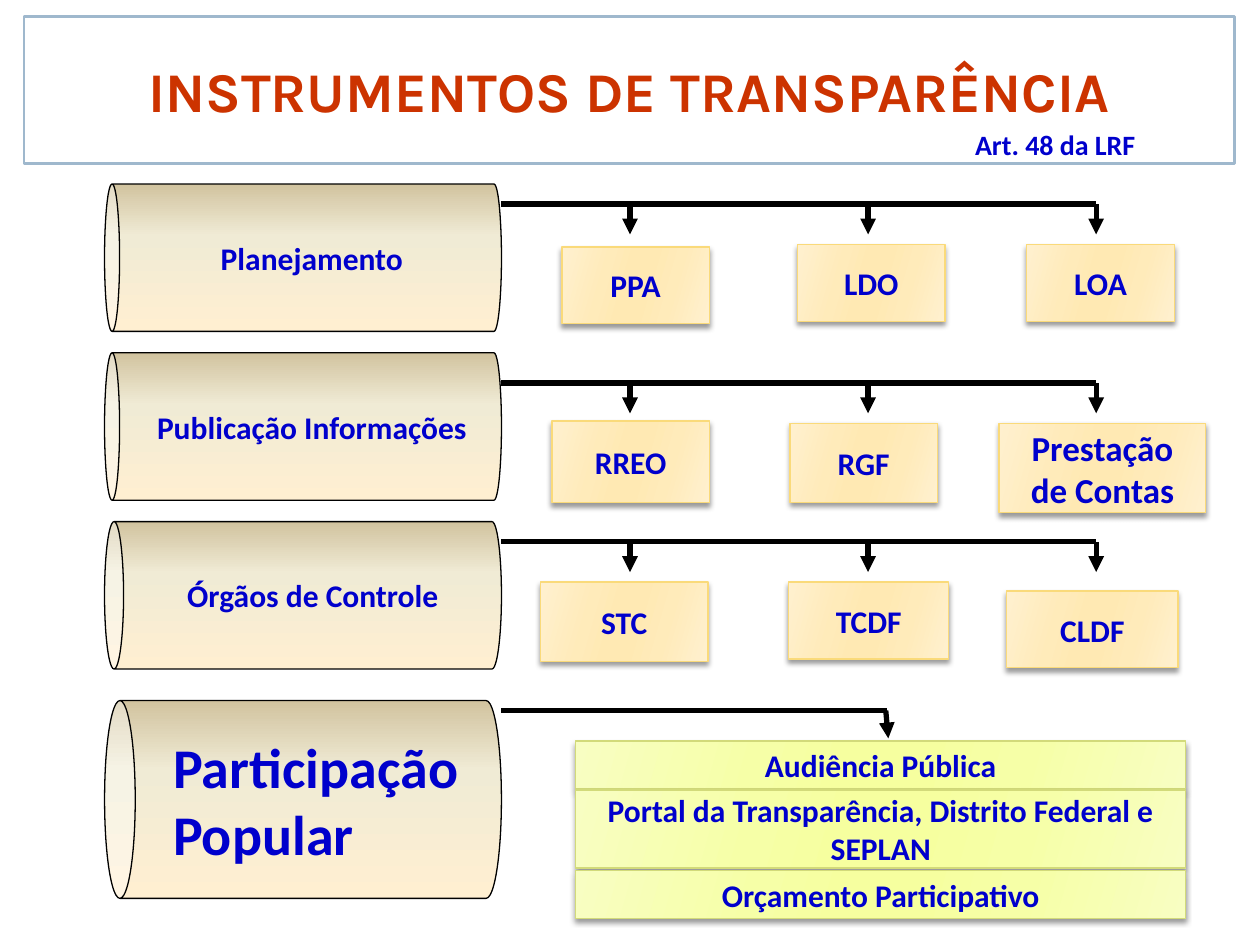
from pptx import Presentation
from pptx.dml.color import RGBColor
from pptx.enum.shapes import MSO_CONNECTOR, MSO_SHAPE
from pptx.enum.text import MSO_ANCHOR, PP_ALIGN
from pptx.oxml import parse_xml
from pptx.oxml.ns import nsdecls, qn
from pptx.util import Inches, Pt
from lxml import etree

RECTANGLE, CAN = MSO_SHAPE.RECTANGLE, MSO_SHAPE.CAN
STRAIGHT = MSO_CONNECTOR.STRAIGHT
MIDDLE = MSO_ANCHOR.MIDDLE
CENTER, LEFT = PP_ALIGN.CENTER, PP_ALIGN.LEFT

COLORS = {
    "white": "FFFFFF", "black": "000000", "frame": "9FB8CD",
    "title": "CC3300", "text": "0000CC",
    "amber_line": "FADA7A", "lime_line": "D2DA7A",
}
CAN_STOPS = [(0, "FFEFD1"), (65, "F0EBD5"), (100, "D1C39F")]
SHEEN = (0, 30, 45, 55, 73, 100)
AMBER = ("FFF0CF", "FFEBBA", "FFE9B3")
LIME = ("F8FEC2", "F6FFA7", "F6FF9F")

CAN_LEFT, CAN_WIDTH = 0.83, 3.15
BUS_LEFT = CAN_LEFT + CAN_WIDTH
DROPS = (5, 6.89, 8.7)
DROP_LENGTH = 0.24

ROWS = [
    ("Planejamento", 1.46, 0.102, 0.16,
     [("PPA", 4.46, 0.5, 1.17, 0.61, 18),
      ("LDO", 6.33, 0.48, 1.17, 0.61, 18),
      ("LOA", 8.15, 0.48, 1.17, 0.61, 18)]),
    ("Publicação Informações", 2.8, 0.102, 0.24,
     [("RREO", 4.38, 0.54, 1.25, 0.65, 18),
      ("RGF", 6.27, 0.56, 1.17, 0.63, 18),
      ("Prestação de Contas", 7.93, 0.56, 1.64, 0.71, 20)]),
    ("Órgãos de Controle", 4.14, 0.129, 0.16,
     [("STC", 4.29, 0.48, 1.33, 0.63, 18),
      ("TCDF", 6.26, 0.48, 1.27, 0.61, 18),
      ("CLDF", 7.99, 0.55, 1.36, 0.61, 18)]),
]
CHANNELS = [
    ("Audiência Pública", 0.32, 0.38),
    ("Portal da Transparência, Distrito Federal e SEPLAN", 0.71, 0.62),
    ("Orçamento Participativo", 1.35, 0.38),
]


def rgb(name):
    return RGBColor.from_string(COLORS[name])


def style_text(paragraph, size, align, color="text", font="Calibri"):
    paragraph.alignment = align
    paragraph.font.size = Pt(size)
    paragraph.font.name = font
    paragraph.font.bold = True
    paragraph.font.color.rgb = rgb(color)


def set_outline(shape, color, width):
    shape.line.color.rgb = rgb(color)
    shape.line.width = Pt(width)


def set_gradient(shape, stops, angle):
    shape.fill.solid()
    marks = "".join(
        f'<a:gs pos="{position * 1000}"><a:srgbClr val="{color}"/></a:gs>'
        for position, color in stops)
    gradient = parse_xml(
        f'<a:gradFill {nsdecls("a")} rotWithShape="1"><a:gsLst>{marks}</a:gsLst>'
        f'<a:lin ang="{angle * 60000}" scaled="0"/></a:gradFill>')
    properties = shape.element.spPr
    properties.replace(properties.find(qn("a:solidFill")), gradient)


def add_shadow(shape):
    shape.shadow.inherit = False
    shape.element.spPr.find(qn("a:effectLst")).append(parse_xml(
        f'<a:outerShdw {nsdecls("a")} blurRad="{Pt(3)}" dist="{Pt(2)}" '
        'dir="5400000" rotWithShape="0"><a:srgbClr val="000000">'
        '<a:alpha val="40000"/></a:srgbClr></a:outerShdw>'))


def add_line(slide, x1, y1, x2, y2, arrow=False):
    line = slide.shapes.add_connector(
        STRAIGHT, Inches(x1), Inches(y1), Inches(x2), Inches(y2))
    set_outline(line, "black", 3)
    if arrow:
        etree.SubElement(line.line._get_or_add_ln(), qn("a:tailEnd"), type="triangle")
    etree.SubElement(line.element.spPr, qn("a:effectLst"))


def add_card(slide, label, left, top, width, height, size, tones, outline):
    card = slide.shapes.add_shape(
        RECTANGLE, Inches(left), Inches(top), Inches(width), Inches(height))
    set_gradient(card, list(zip(SHEEN, tones + tones[::-1])), 16)
    set_outline(card, outline, 0.75)
    add_shadow(card)
    frame = card.text_frame
    frame.word_wrap = True
    frame.vertical_anchor = MIDDLE
    frame.margin_top = frame.margin_bottom = 0
    frame.text = label
    style_text(frame.paragraphs[0], size, CENTER)


def add_can(slide, label, top, height, lid, size):
    left = CAN_LEFT + (CAN_WIDTH - height) / 2
    upright_top = top + (height - CAN_WIDTH) / 2
    can = slide.shapes.add_shape(
        CAN, Inches(left), Inches(upright_top), Inches(height), Inches(CAN_WIDTH))
    can.rotation = 270
    can.adjustments[0] = lid
    can.shadow.inherit = False
    set_gradient(can, CAN_STOPS, 0)
    set_outline(can, "black", 0.75)
    frame = can.text_frame
    frame.word_wrap = True
    frame.vertical_anchor = MIDDLE
    frame.margin_left = frame.margin_top = frame.margin_right = Inches(0.08)
    frame.margin_bottom = 0
    body = frame._txBody.bodyPr
    body.set("vert", "eaVert")
    body.set("anchorCtr", "1")
    frame.text = label
    style_text(frame.paragraphs[0], size, LEFT)


def add_header(slide, left, top, width, height):
    title = slide.shapes.title
    title.left, title.top = Inches(left), Inches(top)
    title.width, title.height = Inches(width), Inches(height)
    title.fill.solid()
    title.fill.fore_color.rgb = rgb("white")
    set_outline(title, "frame", 1.5)
    title.text_frame.vertical_anchor = MIDDLE
    title.text_frame.text = "INSTRUMENTOS DE TRANSPARÊNCIA"
    style_text(title.text_frame.paragraphs[0], 32, CENTER, "title", "Karla")

    article = slide.shapes.add_textbox(
        Inches(left + 7.45), Inches(top + 0.86), Inches(1.81), Inches(0.37))
    article.text_frame.word_wrap = True
    article.text_frame.text = "Art. 48 da LRF"
    paragraph = article.text_frame.paragraphs[0]
    style_text(paragraph, 16, LEFT)
    paragraph.line_spacing = 0.9


def add_instrument_row(slide, label, top, lid, bus_offset, cards):
    add_can(slide, label, top, 1.17, lid, 18)
    bus = top + bus_offset
    add_line(slide, BUS_LEFT, bus, DROPS[-1], bus)
    for drop in DROPS:
        add_line(slide, drop, bus, drop, bus + DROP_LENGTH, arrow=True)
    for name, left, offset, width, height, size in cards:
        add_card(slide, name, left, top + offset, width, height, size,
                 AMBER, "amber_line")


def add_participation(slide, top):
    add_can(slide, "Participação Popular", top, 1.57, 0.155, 32)
    bus = top + 0.08
    add_line(slide, BUS_LEFT, bus, 7.04, bus)
    for name, offset, height in CHANNELS:
        add_card(slide, name, 4.57, top + offset, 4.84, height, 18,
                 LIME, "lime_line")
    add_line(slide, 7.03, bus, 7.05, bus + 0.22, arrow=True)


def main():
    deck = Presentation()
    deck.slide_width, deck.slide_height = Inches(10), Inches(7.5)
    slide = deck.slides.add_slide(deck.slide_layouts[5])
    add_header(slide, 0.19, 0.13, 9.61, 1.17)
    for row in ROWS:
        add_instrument_row(slide, *row)
    add_participation(slide, 5.56)
    deck.save("out.pptx")


if __name__ == "__main__":
    main()
